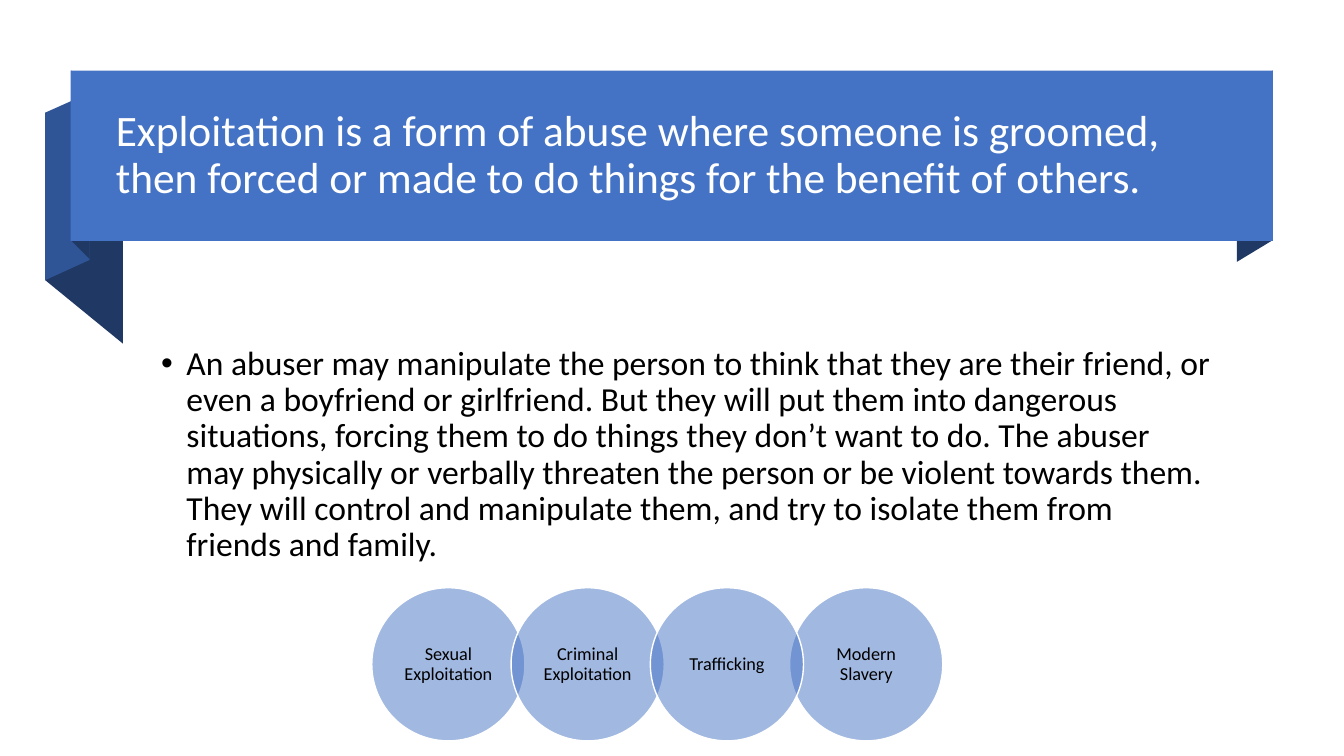
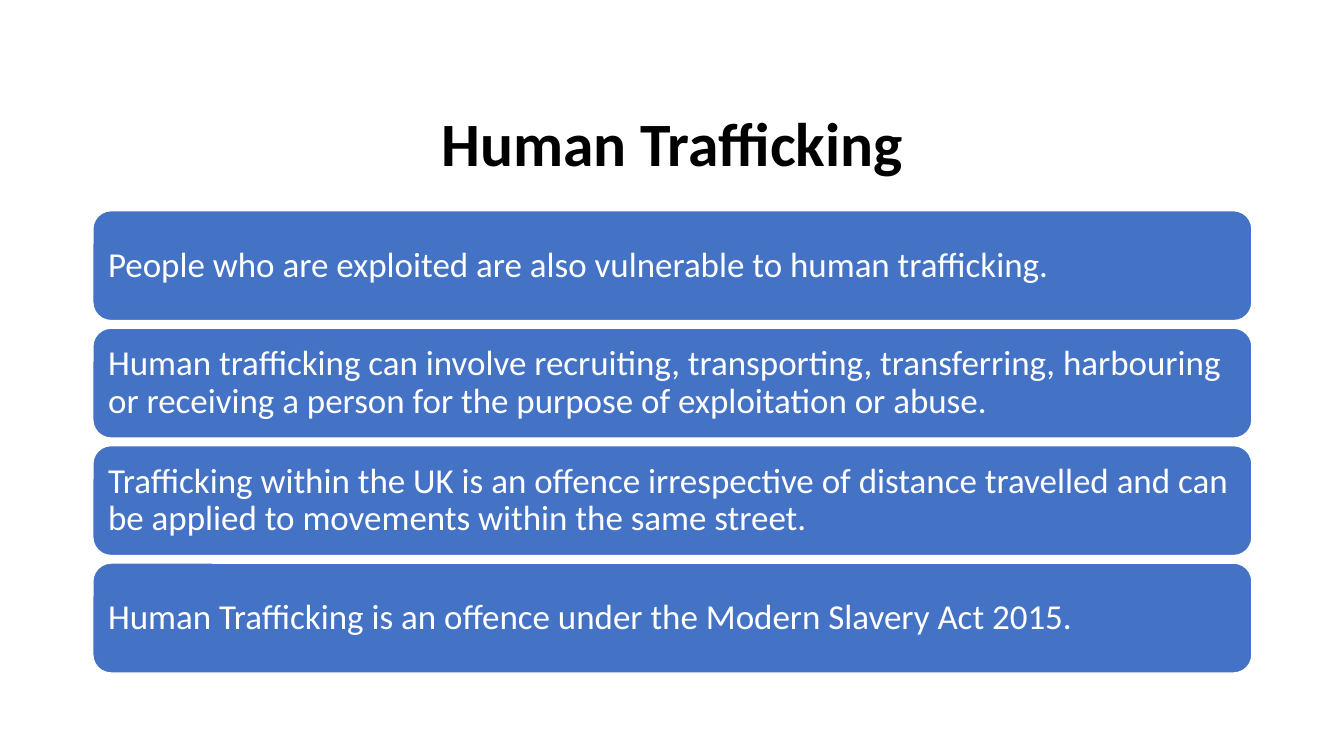
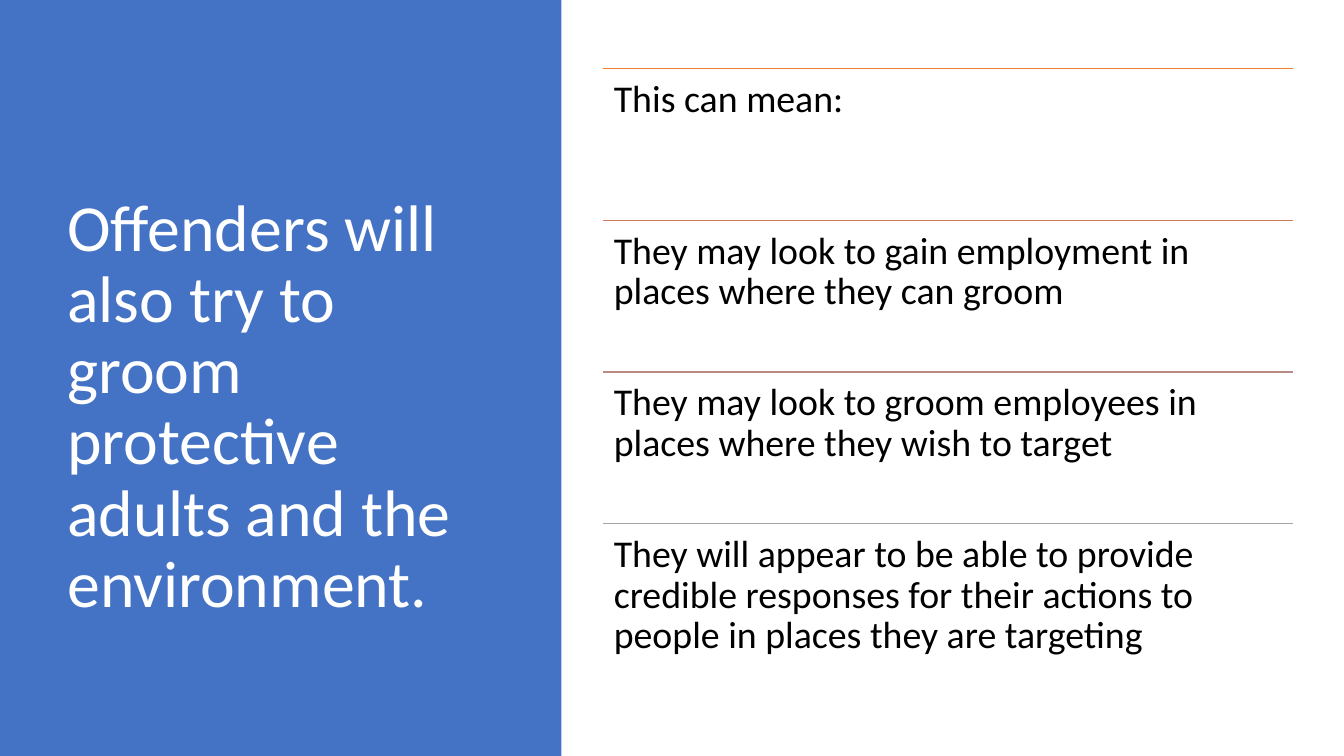
from lxml.etree import SubElement
from pptx import Presentation
from pptx.dml.color import RGBColor as Rgb
from pptx.enum.shapes import MSO_CONNECTOR as Conn, MSO_SHAPE as Kind
from pptx.enum.text import MSO_ANCHOR as Anchor, PP_ALIGN as Align
from pptx.oxml.ns import qn
from pptx.util import Cm, Pt

WIDE, HIGH = 33.87, 19.05
FONT = "Calibri"
HUES = {
    "blue": "4472C4", "mid": "2F5597", "navy": "203864",
    "white": "FFFFFF", "black": "000000",
    "rule1": "ED7D31", "rule2": "D17B5C", "rule3": "B98A82", "rule4": "A5A5A5",
}


def hue(name):
    return Rgb.from_string(HUES[name])


def apply(obj, vals):
    """Set every attribute named in vals on obj."""
    for key, val in vals.items():
        setattr(obj, key, val)


class Deck:
    """Holds the shared style and the slide being filled."""

    def __init__(self):
        self.prs = Presentation()
        apply(self.prs, {"slide_width": Cm(WIDE), "slide_height": Cm(HIGH)})
        self.slide = None

    def page(self):
        self.slide = self.prs.slides.add_slide(self.prs.slide_layouts[6])

    def paint(self, shape, fill, edge=None, alpha=None):
        shape.shadow.inherit = False
        shape.fill.solid()
        shape.fill.fore_color.rgb = hue(fill)
        if alpha:
            tint = shape._element.spPr.find(qn("a:solidFill"))[0]
            SubElement(tint, qn("a:alpha"), val=str(alpha * 1000))
        if edge:
            shape.line.color.rgb = hue(edge)
            shape.line.width = Pt(1)
        else:
            shape.line.fill.background()

    def label(self, shape, text, size, ink="black", align=Align.LEFT,
              anchor=Anchor.MIDDLE, pad=(0.25, 0.13, 0.25, 0.13),
              bold=False, bullet=False):
        """Fill a shape with one paragraph; pad is left, top, right, bottom."""
        frame = shape.text_frame
        left, top, right, low = map(Cm, pad)
        apply(frame, {
            "word_wrap": True, "vertical_anchor": anchor,
            "margin_left": left, "margin_top": top,
            "margin_right": right, "margin_bottom": low,
        })
        para = frame.paragraphs[0]
        apply(para, {"alignment": align, "line_spacing": 0.9})
        run = para.add_run()
        run.text = text
        apply(run.font, {"name": FONT, "size": Pt(size), "bold": bold})
        run.font.color.rgb = hue(ink)
        if bullet:
            props = para._p.get_or_add_pPr()
            props.set("marL", str(Cm(0.64)))
            props.set("indent", str(-Cm(0.64)))
            SubElement(props, qn("a:buFont"), typeface="Arial")
            SubElement(props, qn("a:buChar"), char="•")

    def shape(self, kind, box, fill, edge=None, alpha=None):
        shape = self.slide.shapes.add_shape(kind, *map(Cm, box))
        self.paint(shape, fill, edge, alpha)
        return shape

    def text(self, box, text, size, **style):
        shape = self.slide.shapes.add_textbox(*map(Cm, box))
        self.label(shape, text, size, **style)

    def poly(self, points, fill):
        first, *rest = [(Cm(x), Cm(y)) for x, y in points]
        form = self.slide.shapes.build_freeform(*first)
        form.add_line_segments(rest, close=True)
        self.paint(form.convert_to_shape(), fill)

    def rule(self, left, right, top, color):
        line = self.slide.shapes.add_connector(
            Conn.STRAIGHT, Cm(left), Cm(top), Cm(right), Cm(top))
        line.line.color.rgb = hue(color)
        line.line.width = Pt(1)
        SubElement(line._element.spPr, qn("a:effectLst"))


def abuse(deck):
    deck.page()
    ribbon = [
        ("navy", [(3.1, 8.66), (1.14, 7.06), (1.14, 2.84), (3.1, 4.45)]),
        ("mid", [(2.26, 6.55), (1.14, 7.06), (1.14, 2.84), (2.26, 2.34)]),
        ("navy", [(2.26, 6.53), (1.8, 6.07), (1.8, 1.78), (2.26, 2.26)]),
        ("navy", [(32.08, 6.05), (31.17, 6.6), (31.17, 2.31), (32.08, 1.78)]),
    ]
    for fill, points in ribbon:
        deck.poly(points, fill)
    band = deck.shape(Kind.RECTANGLE, (1.78, 1.78, 30.3, 4.29), "blue")
    deck.label(band, "Exploitation is a form of abuse where someone is groomed, "
               "then forced or made to do things for the benefit of others.",
               31, ink="white", pad=(1.14, 0.13, 1.14, 0.13))
    deck.text((3.81, 7.57, 26.97, 7.8),
              "An abuser may manipulate the person to think that they are their "
              "friend, or even a boyfriend or girlfriend. But they will put them "
              "into dangerous situations, forcing them to do things they don’t "
              "want to do. The abuser may physically or verbally threaten the "
              "person or be violent towards them. They will control and "
              "manipulate them, and try to isolate them from friends and family.",
              24, bullet=True)
    size, step = 3.86, 3.51
    rings = [(0, "Sexual Exploitation"), (1, "Criminal Exploitation"),
             (3, "Modern Slavery"), (2, "Trafficking")]
    for slot, name in rings:
        ring = deck.shape(Kind.OVAL, (9.37 + slot * step, 14.81, size, size),
                          "blue", edge="white", alpha=50)
        deck.label(ring, name, 13, align=Align.CENTER,
                   pad=(0.2, 0.05, 0.2, 0.05))


def traffic(deck):
    deck.page()
    deck.text((2.34, 2.3, 29.21, 2.8), "Human Trafficking", 44,
              align=Align.CENTER, bold=True)
    facts = [
        "People who are exploited are also vulnerable to human trafficking.",
        "Human trafficking can involve recruiting, transporting, transferring, "
        "harbouring or receiving a person for the purpose of exploitation or abuse.",
        "Trafficking within the UK is an offence irrespective of distance "
        "travelled and can be applied to movements within the same street.",
        "Human Trafficking is an offence under the Modern Slavery Act 2015.",
    ]
    for row, fact in enumerate(facts):
        bar = deck.shape(Kind.ROUNDED_RECTANGLE,
                         (2.34, 5.31 + row * 2.96, 29.21, 2.77),
                         "blue", edge="white")
        deck.label(bar, fact, 25, ink="white", pad=(0.25,) * 4)


def groom(deck):
    deck.page()
    panel = deck.shape(Kind.RECTANGLE, (0, 0, 14.15, HIGH), "blue")
    deck.label(panel, "Offenders will also try to groom protective adults and "
               "the environment.", 47, ink="white", pad=(1.7, 1.52, 2.39, 0))
    left, wide, step = 15.19, 17.4, 3.82
    signs = [
        ("rule1", "This can mean:"),
        ("rule2", "They may look to gain employment in places where they can groom"),
        ("rule3", "They may look to groom employees in places where they wish "
                  "to target"),
        ("rule4", "They will appear to be able to provide credible responses "
                  "for their actions to people in places they are targeting"),
    ]
    for row, (color, sign) in enumerate(signs):
        top = 1.73 + row * step
        deck.rule(left, left + wide, top, color)
        deck.text((left, top, wide, step), sign, 27, anchor=Anchor.TOP,
                  pad=(0.28,) * 4)


def main():
    deck = Deck()
    for build in (abuse, traffic, groom):
        build(deck)
    deck.prs.save("out.pptx")


if __name__ == "__main__":
    main()
